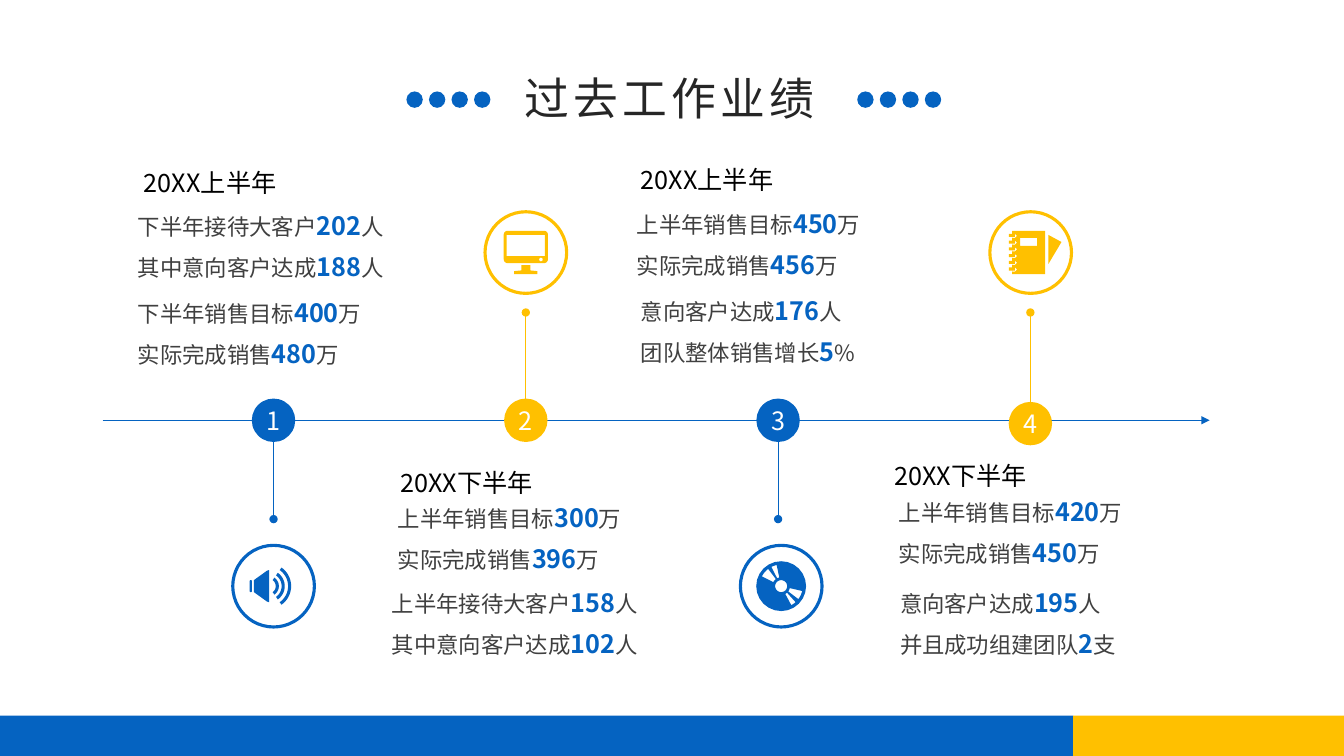
from dataclasses import dataclass
from math import cos, radians, sin

from lxml.etree import SubElement
from pptx import Presentation
from pptx.dml.color import RGBColor
from pptx.enum.shapes import MSO_CONNECTOR, MSO_SHAPE
from pptx.enum.text import MSO_ANCHOR, MSO_AUTO_SIZE, PP_ALIGN
from pptx.oxml.ns import qn
from pptx.util import Pt


@dataclass(frozen=True)
class Theme:
    font: str = "Noto Sans CJK SC"
    blue: str = "0563C1"
    yellow: str = "FFC000"
    title_ink: str = "262626"
    heading_ink: str = "000000"
    body_ink: str = "404040"
    white: str = "FFFFFF"
    title_size: int = 32
    heading_size: int = 18
    figure_size: int = 18
    body_size: int = 16


THEME = Theme()
AXIS_Y = 300.2
FIRST_NODE_X = 195.4
NODE_STEP = 180.2
NODE_SIZE = 31
RING_SIZE = 58.3


def arc(x, y, radius, start, end, steps=24):
    angles = [radians(start + (end - start) * i / steps) for i in range(steps + 1)]
    return [(x + radius * cos(a), y + radius * sin(a)) for a in angles]


def band(x, inner, outer, start, end):
    return arc(x, 0, outer, start, end) + arc(x, 0, inner, end, start)


def box(left, top, right, bottom):
    return [(left, top), (right, top), (right, bottom), (left, bottom)]


def rounded_box(left, top, right, bottom, radius):
    corners = [(right - radius, bottom - radius), (left + radius, bottom - radius),
               (left + radius, top + radius), (right - radius, top + radius)]
    return [point for i, (x, y) in enumerate(corners)
            for point in arc(x, y, radius, 90 * i, 90 * i + 90, 6)]


def speaker_icon():
    horn = [(-14, -4.3), (-4.7, -11), (-3.2, -11.5), (-3.2, 11.5), (-4.7, 11), (-14, 4.3)]
    waves = [band(-3.6, r, r + 2.2, -55, 55) for r in (5.2, 9.4, 14)]
    return [horn, rounded_box(-17, -4.3, -15.5, 4.3, 0.7), *waves]


def monitor_icon():
    stand = [(-3.2, 9), (3.2, 9), (3.2, 12.8), (8.3, 13.3), (8.3, 15.5),
             (-8.3, 15.5), (-8.3, 13.3), (-3.2, 12.8)]
    return [rounded_box(-15.8, -15.5, 15.8, 7.6, 2.8), box(-13.7, -12.6, 13.7, 2.5),
            arc(10.8, 5, 1.3, 0, 360), stand]


def disc_icon():
    glints = [(13, 37), (48, 62), (207, 233), (243, 258)]
    return [arc(0, 0, 17.8, 0, 360), arc(0, 0, 4.3, 0, 360),
            *[band(0, 6.3, 15.4, start, end) for start, end in glints]]


def notebook_icon():
    contours = [box(-13.3, -15.5, 10.4, 15.5), box(-7.5, -10.4, 4.7, -4.7),
                [(12.6, -12.6), (22, -7.5), (12.6, 8.3)]]
    for i in range(6):
        top = -13.3 + 4.8 * i
        contours.append(box(-15.5, top, -13.3, top + 2.2))
        contours.append([(-13.3, top + 2.2), (-11.2, top + 2.2), (-11.2, top),
                         (-9.7, top + 1.4), (-11.2, top + 2.9), (-13.3, top + 2.9)])
    return contours


MILESTONES = [
    dict(color=THEME.blue, heading="20XX上半年", heading_at=(150.1, 130.3),
         node_y=AXIS_Y, stem=(300.2, 370.8), ring=(195.4, 418.7), icon=speaker_icon,
         blocks=[(91.4, 149, [("下半年接待大客户", "202", "人"), ("其中意向客户达成", "188", "人")]),
                 (91.4, 211, [("下半年销售目标", "400", "万"), ("实际完成销售", "480", "万")])]),
    dict(color=THEME.yellow, heading="20XX下半年", heading_at=(333.4, 344.5),
         node_y=AXIS_Y, stem=(223.2, 294.5), ring=(375.6, 180.4), icon=monitor_icon,
         blocks=[(277.2, 357.8, [("上半年销售目标", "300", "万"), ("实际完成销售", "396", "万")]),
                 (272.9, 418.3, [("上半年接待大客户", "158", "人"), ("其中意向客户达成", "102", "人")])]),
    dict(color=THEME.blue, heading="20XX上半年", heading_at=(505.1, 127.8),
         node_y=AXIS_Y, stem=(300.2, 370.8), ring=(558, 418.7), icon=disc_icon,
         blocks=[(447.8, 147.6, [("上半年销售目标", "450", "万"), ("实际完成销售", "456", "万")]),
                 (450.7, 209.5, [("意向客户达成", "176", "人"), ("团队整体销售增长", "5", "%")])]),
    dict(color=THEME.yellow, heading="20XX下半年", heading_at=(686.2, 339.5),
         node_y=302.6, stem=(223.2, 294.5), ring=(736.2, 180.4), icon=notebook_icon,
         blocks=[(635, 353.5, [("上半年销售目标", "420", "万"), ("实际完成销售", "450", "万")]),
                 (635.8, 418.3, [("意向客户达成", "195", "人"), ("并且成功组建团队", "2", "支")])]),
]


def add_run(paragraph, text, *, size, color, bold=False, spacing=None):
    run = paragraph.add_run()
    run.text = text
    run.font.size = Pt(size)
    run.font.bold = bold
    run.font.name = THEME.font
    run.font.color.rgb = RGBColor.from_string(color)
    properties = run.font._element
    SubElement(properties, qn("a:ea")).set("typeface", THEME.font)
    if spacing:
        properties.set("spc", str(spacing * 100))


def set_margins(frame, margin):
    frame.margin_left = frame.margin_right = Pt(margin)
    frame.margin_top = frame.margin_bottom = Pt(margin)


def add_solid(slide, preset, left, top, width, height, color):
    solid = slide.shapes.add_shape(preset, Pt(left), Pt(top), Pt(width), Pt(height))
    solid.shadow.inherit = False
    solid.fill.solid()
    solid.fill.fore_color.rgb = RGBColor.from_string(color)
    solid.line.fill.background()
    return solid


def add_title(slide, text):
    title = slide.shapes.title
    title.left, title.top, title.width, title.height = Pt(374.4), Pt(50.4), Pt(213.2), Pt(38.9)
    frame = title.text_frame
    set_margins(frame, 0)
    frame.auto_size = MSO_AUTO_SIZE.NONE
    frame.vertical_anchor = MSO_ANCHOR.MIDDLE
    paragraph = frame.paragraphs[0]
    paragraph.alignment = PP_ALIGN.JUSTIFY
    add_run(paragraph, text, size=THEME.title_size, color=THEME.title_ink, spacing=3)


def add_line(slide, start, end, color, tail, head=None):
    line = slide.shapes.add_connector(
        MSO_CONNECTOR.STRAIGHT, *[Pt(v) for v in (*start, *end)])
    line.line.width = Pt(0.5)
    line.line.color.rgb = RGBColor.from_string(color)
    outline = line.line._get_or_add_ln()
    if head:
        SubElement(outline, qn("a:headEnd")).set("type", head)
    SubElement(outline, qn("a:tailEnd")).set("type", tail)
    SubElement(line._element.spPr, qn("a:effectLst"))


def add_heading(slide, center, text):
    x, y = center
    heading = slide.shapes.add_textbox(Pt(x - 60), Pt(y - 13.5), Pt(120), Pt(27))
    frame = heading.text_frame
    frame.word_wrap = True
    frame.vertical_anchor = MSO_ANCHOR.MIDDLE
    paragraph = frame.paragraphs[0]
    paragraph.alignment = PP_ALIGN.CENTER
    add_run(paragraph, text, size=THEME.heading_size, color=THEME.heading_ink)


def add_results(slide, left, top, results):
    block = slide.shapes.add_textbox(Pt(left), Pt(top), Pt(208), Pt(57))
    frame = block.text_frame
    frame.word_wrap = True
    frame.auto_size = MSO_AUTO_SIZE.SHAPE_TO_FIT_TEXT
    for i, (label, figure, unit) in enumerate(results):
        paragraph = frame.add_paragraph() if i else frame.paragraphs[0]
        paragraph.line_spacing = 0.9
        paragraph.space_before = Pt(10)
        add_run(paragraph, label, size=THEME.body_size, color=THEME.body_ink)
        add_run(paragraph, figure, size=THEME.figure_size, color=THEME.blue, bold=True)
        add_run(paragraph, unit, size=THEME.body_size, color=THEME.body_ink)


def add_node(slide, x, y, number, color):
    node = add_solid(slide, MSO_SHAPE.OVAL, x - NODE_SIZE / 2, y - NODE_SIZE / 2,
                     NODE_SIZE, NODE_SIZE, color)
    frame = node.text_frame
    set_margins(frame, 0)
    frame.word_wrap = False
    frame.vertical_anchor = MSO_ANCHOR.MIDDLE
    paragraph = frame.paragraphs[0]
    paragraph.alignment = PP_ALIGN.CENTER
    add_run(paragraph, str(number), size=THEME.heading_size, color=THEME.white)


def add_icon(slide, center, contours, color):
    x, y = center
    ring = add_solid(slide, MSO_SHAPE.OVAL, x - RING_SIZE / 2, y - RING_SIZE / 2,
                     RING_SIZE, RING_SIZE, color)
    ring.fill.background()
    ring.line.color.rgb = RGBColor.from_string(color)
    ring.line.width = Pt(2.25)
    placed = [[(Pt(x + dx), Pt(y + dy)) for dx, dy in contour] for contour in contours]
    builder = slide.shapes.build_freeform(*placed[0][0])
    for i, contour in enumerate(placed):
        if i:
            builder.move_to(*contour[0])
        builder.add_line_segments(contour[1:], close=True)
    symbol = builder.convert_to_shape()
    symbol.shadow.inherit = False
    symbol.fill.solid()
    symbol.fill.fore_color.rgb = RGBColor.from_string(color)
    symbol.line.fill.background()


def main():
    deck = Presentation()
    deck.slide_width, deck.slide_height = Pt(960), Pt(540)
    slide = deck.slides.add_slide(deck.slide_layouts[5])
    add_solid(slide, MSO_SHAPE.RECTANGLE, 0, 511.2, 766.6, 28.8, THEME.blue)
    add_solid(slide, MSO_SHAPE.RECTANGLE, 766.6, 511.2, 193.4, 28.8, THEME.yellow)
    add_title(slide, "过去工作业绩")
    for row_left in (290.3, 612.3):
        for i in range(4):
            add_solid(slide, MSO_SHAPE.OVAL, row_left + 16.1 * i, 65.3, 11.7, 11.7, THEME.blue)
    add_line(slide, (73.4, AXIS_Y), (864, AXIS_Y), THEME.blue, "triangle")
    for i, milestone in enumerate(MILESTONES):
        x, color = FIRST_NODE_X + NODE_STEP * i, milestone["color"]
        start, end = milestone["stem"]
        add_line(slide, (x, start), (x, end), color, "oval", head="oval")
        add_node(slide, x, milestone["node_y"], i + 1, color)
        add_icon(slide, milestone["ring"], milestone["icon"](), color)
        add_heading(slide, milestone["heading_at"], milestone["heading"])
        for left, top, results in milestone["blocks"]:
            add_results(slide, left, top, results)
    deck.save("out.pptx")


if __name__ == "__main__":
    main()
